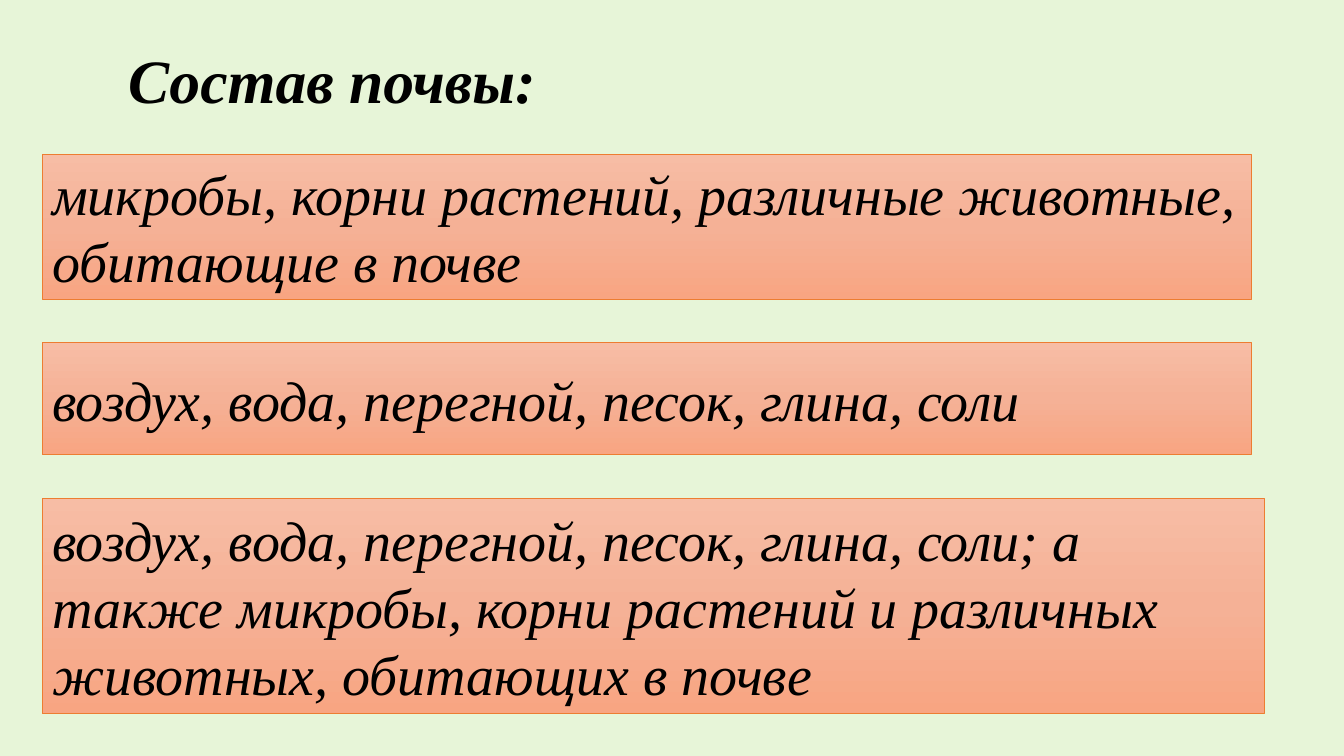
from copy import deepcopy

from pptx import Presentation
from pptx.dml.color import RGBColor
from pptx.enum.shapes import MSO_SHAPE
from pptx.enum.text import MSO_ANCHOR, PP_ALIGN
from pptx.oxml.ns import qn
from pptx.util import Inches, Pt

FONT = "Times New Roman"
BLACK = RGBColor(0x00, 0x00, 0x00)
PALE_GREEN = RGBColor(0xE7, 0xF5, 0xD8)
ORANGE = RGBColor(0xED, 0x7D, 0x31)
PEACH_STOPS = [
    RGBColor(0xF7, 0xBD, 0xA5),
    RGBColor(0xF5, 0xB1, 0x96),
    RGBColor(0xF8, 0xA5, 0x82),
]

# Top, width, height and text of each answer
ANSWERS = [
    (1.53, 11.99, 1.44, "микробы, корни растений, различные животные, обитающие в почве"),
    (3.4, 11.99, 1.11, "воздух, вода, перегной, песок, глина, соли"),
    (4.94, 12.12, 2.14, "воздух, вода, перегной, песок, глина, соли; а также микробы, "
                        "корни растений и различных животных, обитающих в почве"),
]


def write_text(frame, text, size, bold=False):
    frame.word_wrap = True
    para = frame.paragraphs[0]
    para.text = text
    para.alignment = PP_ALIGN.LEFT
    font = para.font
    font.name, font.size = FONT, Pt(size)
    font.bold, font.italic = bold, True
    font.color.rgb = BLACK
    return para


def fill_gradient(fill, colors, stop_list):
    # A new gradient has two stops; the middle one is added between them
    stop_list.insert(1, deepcopy(stop_list[0]))
    for index, (stop, color) in enumerate(zip(fill.gradient_stops, colors)):
        stop.color.rgb = color
        stop.position = index / (len(colors) - 1)
    fill.gradient_angle = 270


deck = Presentation()
deck.slide_width, deck.slide_height = Inches(13.33), Inches(7.5)
page = deck.slides.add_slide(deck.slide_layouts[6])

# Background
page.background.fill.solid()
page.background.fill.fore_color.rgb = PALE_GREEN

# Title
title = page.shapes.add_textbox(Inches(0.92), Inches(0.4), Inches(11.5), Inches(1.45))
title.text_frame.vertical_anchor = MSO_ANCHOR.TOP
title.text_frame.margin_left = Inches(0.35)
title.text_frame.margin_top = Inches(0.1)
write_text(title.text_frame, "Состав почвы:", 44, bold=True).line_spacing = 0.9

# Answer buttons
for top, width, height, text in ANSWERS:
    button = page.shapes.add_shape(
        MSO_SHAPE.ACTION_BUTTON_CUSTOM,
        Inches(0.42), Inches(top), Inches(width), Inches(height))
    button.shadow.inherit = False
    button.fill.gradient()
    stop_list = button._element.spPr.find(".//" + qn("a:gsLst"))
    fill_gradient(button.fill, PEACH_STOPS, stop_list)
    button.line.color.rgb = ORANGE
    button.line.width = Pt(0.5)
    button.text_frame.vertical_anchor = MSO_ANCHOR.MIDDLE
    write_text(button.text_frame, text, 40)

deck.save("out.pptx")
